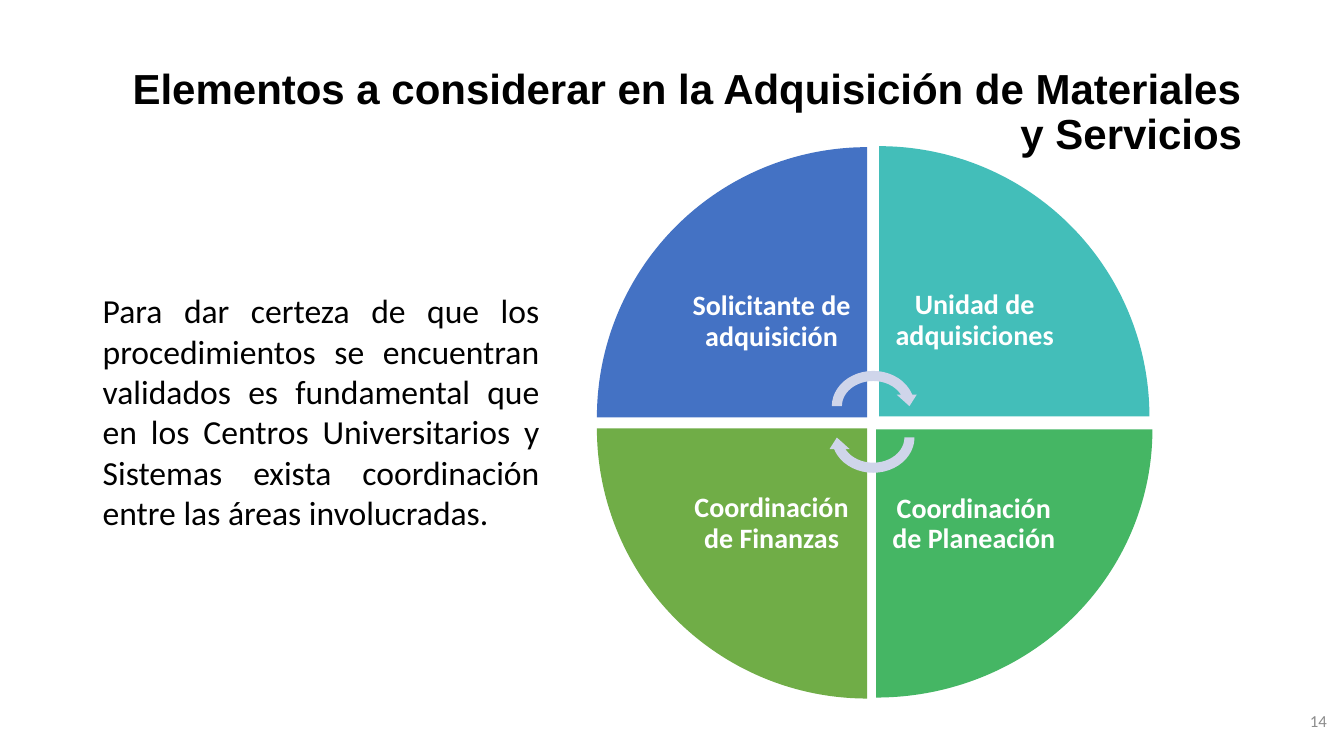
from pptx import Presentation
from pptx.dml.color import RGBColor
from pptx.enum.shapes import MSO_SHAPE
from pptx.enum.text import MSO_ANCHOR, PP_ALIGN
from pptx.util import Inches, Pt

prs = Presentation()
prs.slide_width, prs.slide_height = Inches(13.33), Inches(7.5)
slide = prs.slides.add_slide(prs.slide_layouts[6])


def add_text(text, box, size, color, align, font="Calibri", bold=False,
             anchor=MSO_ANCHOR.MIDDLE, spacing=1.0, inset=None):
    frame = slide.shapes.add_textbox(*map(Inches, box)).text_frame
    frame.word_wrap = True
    frame.vertical_anchor = anchor
    if inset is not None:
        frame.margin_left = frame.margin_right = Inches(inset)
        frame.margin_top = frame.margin_bottom = Inches(inset)
    paragraph = frame.paragraphs[0]
    paragraph.text = text
    paragraph.alignment = align
    paragraph.line_spacing = spacing
    run_font = paragraph.runs[0].font
    run_font.name, run_font.size, run_font.bold = font, Pt(size), bold
    run_font.color.rgb = RGBColor.from_string(color)


def add_filled(preset, box, rotation, color):
    shape = slide.shapes.add_shape(preset, *map(Inches, box))
    shape.rotation = rotation
    shape.shadow.inherit = False
    shape.fill.solid()
    shape.fill.fore_color.rgb = RGBColor.from_string(color)
    shape.line.fill.background()


# Explanation, title and page number
add_text("Para dar certeza de que los procedimientos se encuentran validados es "
         "fundamental que en los Centros Universitarios y Sistemas exista "
         "coordinación entre las áreas involucradas.",
         (0.92, 2.83, 4.53, 2.52), 24, "000000", PP_ALIGN.JUSTIFY,
         anchor=MSO_ANCHOR.TOP)
add_text("Elementos a considerar en la Adquisición de Materiales y Servicios",
         (0.92, 0.4, 11.5, 1.45), 30, "000000", PP_ALIGN.RIGHT,
         font="Arial", bold=True, spacing=0.9)
add_text("14", (10.26, 6.95, 3, 0.4), 12, "8C8C8C", PP_ALIGN.RIGHT)

# Four quadrants, clockwise from top left, each label towards the centre
quadrants = [
    ("Solicitante de adquisición", (5.92, 1.46, 2.68, 2.68), "4472C4"),
    ("Unidad de adquisiciones", (8.72, 1.45, 2.68, 2.68), "43BEB9"),
    ("Coordinación de Planeación", (8.69, 4.26, 2.74, 2.66), "45B664"),
    ("Coordinación de Finanzas", (5.92, 4.25, 2.68, 2.68), "70AD47"),
]
LABEL_SHARE = 0.707
for index, (area, wedge, color) in enumerate(quadrants):
    left, top, width, height = wedge
    label_width, label_height = width * LABEL_SHARE, height * LABEL_SHARE
    if index in (0, 3):
        left += width - label_width
    if index in (0, 1):
        top += height - label_height
    add_filled(MSO_SHAPE.PIE_WEDGE, wedge, 90 * index, color)
    add_text(area, (left, top, label_width, label_height), 20, "FFFFFF",
             PP_ALIGN.CENTER, bold=True, spacing=0.9, inset=0.16)

# Cycle arrows in the centre
for top, rotation in ((3.63, 0), (3.94, 180)):
    add_filled(MSO_SHAPE.CIRCULAR_ARROW, (8.2, top, 0.92, 0.8), rotation, "CFD5EA")

prs.save("out.pptx")
